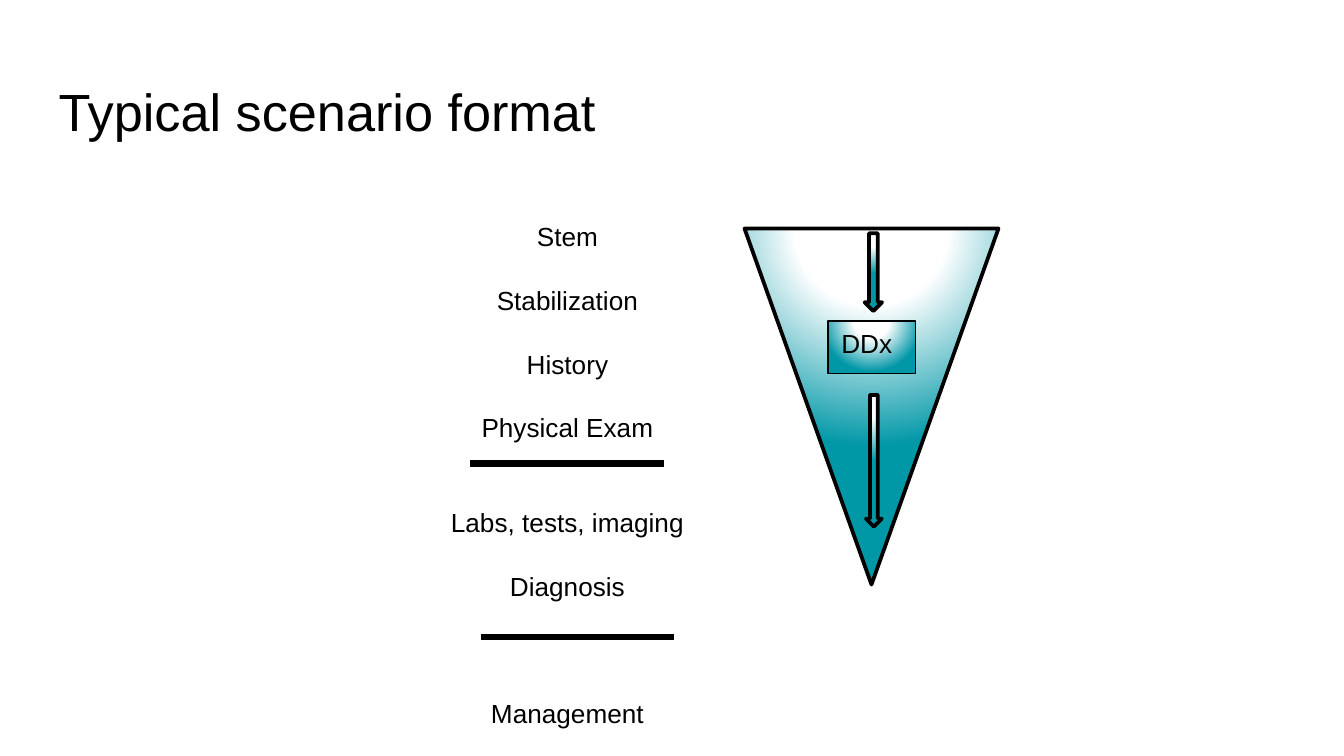
"""Build the slide on the typical scenario format."""
from pptx import Presentation
from pptx.dml.color import RGBColor
from pptx.enum.shapes import MSO_CONNECTOR as Link, MSO_SHAPE as Kind
from pptx.enum.text import MSO_ANCHOR as Anchor, MSO_AUTO_SIZE as Fit, PP_ALIGN as Align
from pptx.oxml import parse_xml
from pptx.oxml.ns import nsdecls, qn
from pptx.util import Cm, Pt

BLACK = RGBColor(0, 0, 0)
WHITE = RGBColor(255, 255, 255)
TEAL = RGBColor(0x00, 0x97, 0xA7)
FONT = "Arial"
PITCH, LINE = 16.75, 16.1

TITLE = "Typical scenario format"
STEPS = [
    ("Stem", 1), ("Stabilization", 2), ("History", 2), ("Physical Exam", 2),
    ("Labs, tests, imaging", 3), ("Diagnosis", 2), ("Management", 4),
]
RULES = [(8.89, 8.76), (9.09, 12.04)]
RULE_WIDTH = 3.65
FUNNEL = [
    (Kind.ISOSCELES_TRIANGLE, (14.07, 4.32, 4.8, 6.73), 180, 2, ""),
    (Kind.RECTANGLE, (15.65, 6.07, 1.65, 0.99), 0, 0.75, "DDx"),
    (Kind.RIGHT_ARROW, (15.77, 4.98, 1.47, 0.33), 90, 2, ""),
    (Kind.RIGHT_ARROW, (15.27, 8.56, 2.49, 0.3), 90, 2, ""),
]
STOPS = [(0, WHITE), (35, WHITE), (100, TEAL)]


def style(par, size, align=Align.LEFT):
    par.alignment = align
    par.font.name, par.font.size = FONT, Pt(size)
    par.font.color.rgb = BLACK


def shade(shape):
    stops = "".join(
        f'<a:gs pos="{pos * 1000}"><a:srgbClr val="{tone}"/></a:gs>' for pos, tone in STOPS
    )
    grad = parse_xml(
        f'<a:gradFill {nsdecls("a")} rotWithShape="0"><a:gsLst>{stops}</a:gsLst>'
        '<a:path path="circle"><a:fillToRect l="50000" t="-80000" r="50000" b="180000"/>'
        "</a:path></a:gradFill>"
    )
    shape.fill.background()
    props = shape._element.spPr
    props.replace(props.find(qn("a:noFill")), grad)


def add_title(slide):
    title = slide.shapes.title
    title.left, title.top, title.width, title.height = map(Cm, (0.86, 1.24, 23.67, 1.6))
    frame = title.text_frame
    frame.text = TITLE
    frame.auto_size, frame.vertical_anchor = Fit.NONE, Anchor.TOP
    frame.margin_left = frame.margin_right = Cm(0.25)
    frame.margin_top = frame.margin_bottom = Cm(0.25)
    style(frame.paragraphs[0], 28)


def add_steps(slide):
    frame = slide.shapes.add_textbox(*map(Cm, (8.26, 4.04, 4.93, 9.83))).text_frame
    frame.word_wrap = False
    frame.text = "\n".join(text for text, _ in STEPS)
    for par, (_, rows) in zip(frame.paragraphs, STEPS):
        style(par, 14, Align.CENTER)
        if rows > 1:
            par.space_before = Pt(rows * PITCH - LINE)
    for left, top in RULES:
        ends = map(Cm, (left, top, left + RULE_WIDTH, top))
        rule = slide.shapes.add_connector(Link.STRAIGHT, *ends)
        rule.line.color.rgb, rule.line.width = BLACK, Pt(3.5)
        rule._element.spPr.append(parse_xml(f'<a:effectLst {nsdecls("a")}/>'))


def add_funnel(slide):
    for kind, box, turn, width, text in FUNNEL:
        shape = slide.shapes.add_shape(kind, *map(Cm, box))
        shape.rotation = turn
        shape.shadow.inherit = False
        shade(shape)
        shape.line.color.rgb, shape.line.width = BLACK, Pt(width)
        if text:
            frame = shape.text_frame
            frame.text = text
            frame.vertical_anchor = Anchor.TOP
            style(frame.paragraphs[0], 14)


def main():
    deck = Presentation()
    deck.slide_width, deck.slide_height = Cm(25.4), Cm(14.29)
    slide = deck.slides.add_slide(deck.slide_layouts[5])
    add_title(slide)
    add_steps(slide)
    add_funnel(slide)
    deck.save("out.pptx")


if __name__ == "__main__":
    main()
